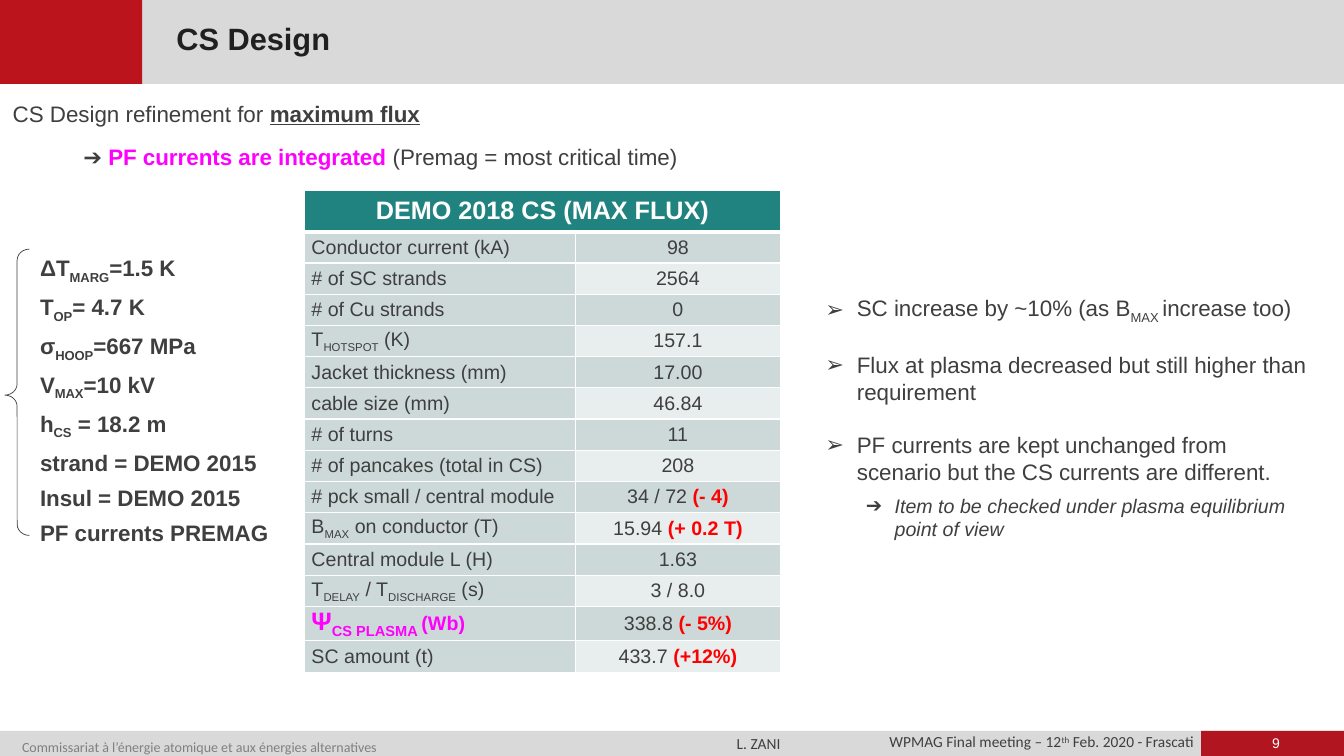
from collections import namedtuple
from dataclasses import dataclass

from lxml.etree import SubElement
from pptx import Presentation
from pptx.dml.color import RGBColor
from pptx.enum.shapes import MSO_SHAPE as Shape
from pptx.enum.text import MSO_ANCHOR as Anchor, MSO_AUTO_SIZE as AutoSize, PP_ALIGN as Align
from pptx.oxml.ns import qn
from pptx.util import Pt

Box = namedtuple("Box", "x y w h")


@dataclass(frozen=True)
class Theme:
    font: str = "Arial"
    footer_font: str = "Calibri"
    text: str = "3F3F3F"
    title: str = "202020"
    muted: str = "808080"
    white: str = "FFFFFF"
    band: str = "D9D9D9"
    red: str = "BC141C"
    page_red: str = "B1151F"
    accent: str = "FF00FF"
    change: str = "FF0000"
    head: str = "218380"
    dark_cell: str = "CDD9D8"
    light_cell: str = "E8EDED"
    title_size: int = 22
    head_size: int = 18
    body_size: int = 16
    cell_size: int = 14
    footer_size: int = 11
    small_size: int = 10


T = Theme()


# Text helpers: a run is a string or a (string, style) pair
def sub(text, **style):
    return text, dict(style, base=-25)


def sup(text):
    return text, dict(base=30)


def change(text):
    return text, dict(color=T.change, bold=True)


def write(para, runs, **defaults):
    for part in runs:
        text, own = (part, {}) if isinstance(part, str) else part
        style = {"size": T.body_size, "color": T.text, "font": T.font, **defaults, **own}
        run = para.add_run()
        run.text = text
        font = run.font
        font.size, font.name = Pt(style["size"]), style["font"]
        font.color.rgb = RGBColor.from_string(style["color"])
        font.bold, font.italic = style.get("bold", False), style.get("italic", False)
        font.underline = style.get("underline", False)
        if "base" in style:
            font._element.set("baseline", str(style["base"] * 1000))


def text_frame(slide, box, insets=(7.2, 3.6), wrap=True):
    frame = slide.shapes.add_textbox(*map(Pt, box)).text_frame
    frame.word_wrap = wrap
    frame.margin_left = frame.margin_right = Pt(insets[0])
    frame.margin_top = frame.margin_bottom = Pt(insets[1])
    return frame


def paragraphs(frame, count):
    return [frame.paragraphs[0]] + [frame.add_paragraph() for _ in range(count - 1)]


def indent(para, margin, hanging=0, bullet=None):
    props = para._p.get_or_add_pPr()
    props.set("marL", str(Pt(margin)))
    props.set("indent", str(-Pt(hanging)))
    if bullet:
        SubElement(props, qn("a:buFont")).set("typeface", T.font)
        SubElement(props, qn("a:buChar")).set("char", bullet)


def band(slide, box, color):
    bar = slide.shapes.add_shape(Shape.RECTANGLE, *map(Pt, box))
    bar.shadow.inherit = False
    bar.fill.solid()
    bar.fill.fore_color.rgb = RGBColor.from_string(color)
    bar.line.fill.background()


# Title band
def header(slide, box, title):
    band(slide, box, T.band)
    band(slide, box._replace(w=101.5), T.red)
    holder = slide.shapes.title
    holder._element.getparent().append(holder._element)
    holder.left, holder.top = Pt(box.x + 116), Pt(box.y + 15)
    holder.width, holder.height = Pt(461.5), Pt(29.5)
    frame = holder.text_frame
    frame.auto_size, frame.vertical_anchor = AutoSize.NONE, Anchor.MIDDLE
    frame.margin_left = frame.margin_right = Pt(10)
    para = frame.paragraphs[0]
    para.alignment, para.line_spacing = Align.LEFT, 0.8
    write(para, [title], size=T.title_size, color=T.title, bold=True)


# Footer band
def footer(slide, box):
    page_width = 102
    band(slide, box, T.band)
    band(slide, Box(box.x + box.w - page_width, box.y, page_width, box.h), T.page_red)
    calibri = dict(font=T.footer_font, size=T.footer_size)
    entries = [
        (618, 2.5, 240.5, Align.RIGHT, 0.9, calibri,
         ["WPMAG Final meeting – 12", sup("th"), " Feb. 2020 - Frascati"]),
        (10, 1, 434, Align.LEFT, 1.4, dict(calibri, size=T.small_size, color=T.muted),
         ["Commissariat à l’énergie atomique et aux énergies alternatives"]),
        (520.5, 2, 43, Align.LEFT, 1, calibri, ["L. ZANI"]),
        (878.5, 2.5, 66, Align.CENTER, 1, dict(size=T.small_size, color=T.white), ["9"]),
    ]
    for dx, dy, width, align, spacing, style, runs in entries:
        frame = text_frame(slide, Box(box.x + dx, box.y + dy, width, 13), (5.75, 0))
        para = frame.paragraphs[0]
        para.alignment, para.line_spacing = align, spacing
        write(para, runs, **style)


# Introduction
def introduction(slide, box):
    lines = [
        ["CS Design refinement for ", ("maximum flux", dict(bold=True, underline=True))],
        ["➔ ", ("PF currents are integrated ", dict(color=T.accent, bold=True)),
         "(Premag = most critical time)"],
    ]
    aim, integrated = paras = paragraphs(text_frame(slide, box), len(lines))
    indent(integrated, 50.5)
    integrated.space_before = Pt(6)
    for para, runs in zip(paras, lines):
        para.alignment, para.line_spacing = Align.JUSTIFY, Pt(25)
        write(para, runs)


# Design assumptions with their brace
def assumptions(slide, box):
    brace = slide.shapes.add_shape(Shape.LEFT_BRACE, *map(Pt, box._replace(w=17.5)))
    brace.shadow.inherit = False
    brace.fill.background()
    brace.line.color.rgb = RGBColor.from_string(T.text)
    brace.line.width = Pt(0.5)
    brace.adjustments[0], brace.adjustments[1] = 0.46, 0.51
    lines = [
        ["ΔT", sub("MARG"), "=1.5 K"],
        ["T", sub("OP"), "= 4.7 K"],
        ["σ", sub("HOOP"), "=667 MPa"],
        ["V", sub("MAX"), "=10 kV"],
        ["h", sub("CS"), " = 18.2 m"],
        ["strand = DEMO 2015"],
        ["Insul = DEMO 2015"],
        ["PF currents PREMAG"],
    ]
    frame = text_frame(slide, box._replace(x=box.x + 18, w=box.w - 18))
    for i, (para, runs) in enumerate(zip(paragraphs(frame, len(lines)), lines)):
        para.space_before = Pt(6 if i else 0)
        write(para, runs, bold=True)


# Parameter table
def style_cell(cell, fill, runs, align, inset, top=1, bottom=1, **style):
    props = cell._tc.get_or_add_tcPr()
    for side, width in dict(lnL=1, lnR=1, lnT=top, lnB=bottom).items():
        line = SubElement(props, qn(f"a:{side}"), w=str(Pt(width)))
        SubElement(SubElement(line, qn("a:solidFill")), qn("a:srgbClr"), val=T.white)
    cell.fill.solid()
    cell.fill.fore_color.rgb = RGBColor.from_string(fill)
    cell.margin_left = cell.margin_right = Pt(inset)
    cell.margin_top = cell.margin_bottom = 0
    cell.vertical_anchor = Anchor.MIDDLE
    cell.text_frame.paragraphs[0].alignment = align
    write(cell.text_frame.paragraphs[0], runs, **style)


def parameter_table(slide, box):
    flux = dict(color=T.accent, bold=True)
    rows = [
        (["Conductor current (kA)"], ["98"]),
        (["# of SC strands"], ["2564"]),
        (["# of Cu strands"], ["0"]),
        (["T", sub("HOTSPOT"), " (K)"], ["157.1"]),
        (["Jacket thickness (mm)"], ["17.00"]),
        (["cable size (mm)"], ["46.84"]),
        (["# of turns"], ["11"]),
        (["# of pancakes (total in CS)"], ["208"]),
        (["# pck small / central module"], ["34 / 72 ", change("(- 4)")]),
        (["B", sub("MAX"), " on conductor (T)"], ["15.94 ", change("(+ 0.2 T)")]),
        (["Central module L (H)"], ["1.63"]),
        (["T", sub("DELAY"), " / T", sub("DISCHARGE"), " (s)"], ["3 / 8.0"]),
        ([("Ψ", dict(flux, size=T.head_size)), sub("CS PLASMA ", size=T.head_size, **flux),
          ("(Wb)", flux)], ["338.8 ", change("(- 5%)")]),
        (["SC amount (t)"], ["433.7 ", change("(+12%)")]),
    ]
    head_height, label_width = 29.5, 193.5
    table = slide.shapes.add_table(len(rows) + 1, 2, *map(Pt, box)).table
    table.horz_banding = False
    table.columns[0].width, table.columns[1].width = Pt(label_width), Pt(box.w - label_width)
    for row in table.rows:
        row.height = Pt((box.h - head_height) / len(rows))
    table.rows[0].height = Pt(head_height)
    table.cell(0, 0).merge(table.cell(0, 1))
    for column, runs in enumerate((["DEMO 2018 CS (MAX FLUX)"], [])):
        style_cell(table.cell(0, column), T.head, runs, Align.CENTER, 5, bottom=3,
                   size=T.head_size, color=T.white, bold=True)
    for i, (label, value) in enumerate(rows, 1):
        top = 3 if i == 1 else 1
        style_cell(table.cell(i, 0), T.dark_cell, label, Align.LEFT, 5, top, size=T.cell_size)
        style_cell(table.cell(i, 1), T.dark_cell if i % 2 else T.light_cell, value,
                   Align.CENTER, 0, top, size=T.cell_size)


# Findings
def findings(slide, box):
    points = [
        ["SC increase by ~10% (as B", sub("MAX "), "increase too)"],
        ["Flux at plasma decreased but still higher than requirement"],
        ["PF currents are kept unchanged from scenario but the CS currents are different."],
    ]
    *main, check = paragraphs(text_frame(slide, box), len(points) + 1)
    for i, (para, runs) in enumerate(zip(main, points)):
        indent(para, 22.5, 22.5, "➢")
        para.space_before = Pt(19 if i else 0)
        write(para, runs)
    check.level = 1
    indent(check, 49.5, 20.5, "➔")
    check.space_before = Pt(6)
    write(check, ["Item to be checked under plasma equilibrium point of view"],
          size=T.cell_size, italic=True)


def main():
    deck = Presentation()
    deck.slide_width, deck.slide_height = Pt(960), Pt(540)
    slide = deck.slides.add_slide(deck.slide_layouts[5])
    header(slide, Box(0, 0, 960, 60), "CS Design")
    footer(slide, Box(0, 522, 960, 18))
    introduction(slide, Box(2, 62, 703, 64))
    parameter_table(slide, Box(217.5, 136, 340, 342))
    findings(slide, Box(582.5, 206.5, 359.5, 176.5))
    assumptions(slide, Box(3.5, 178, 208, 204.5))
    deck.save("out.pptx")


if __name__ == "__main__":
    main()
